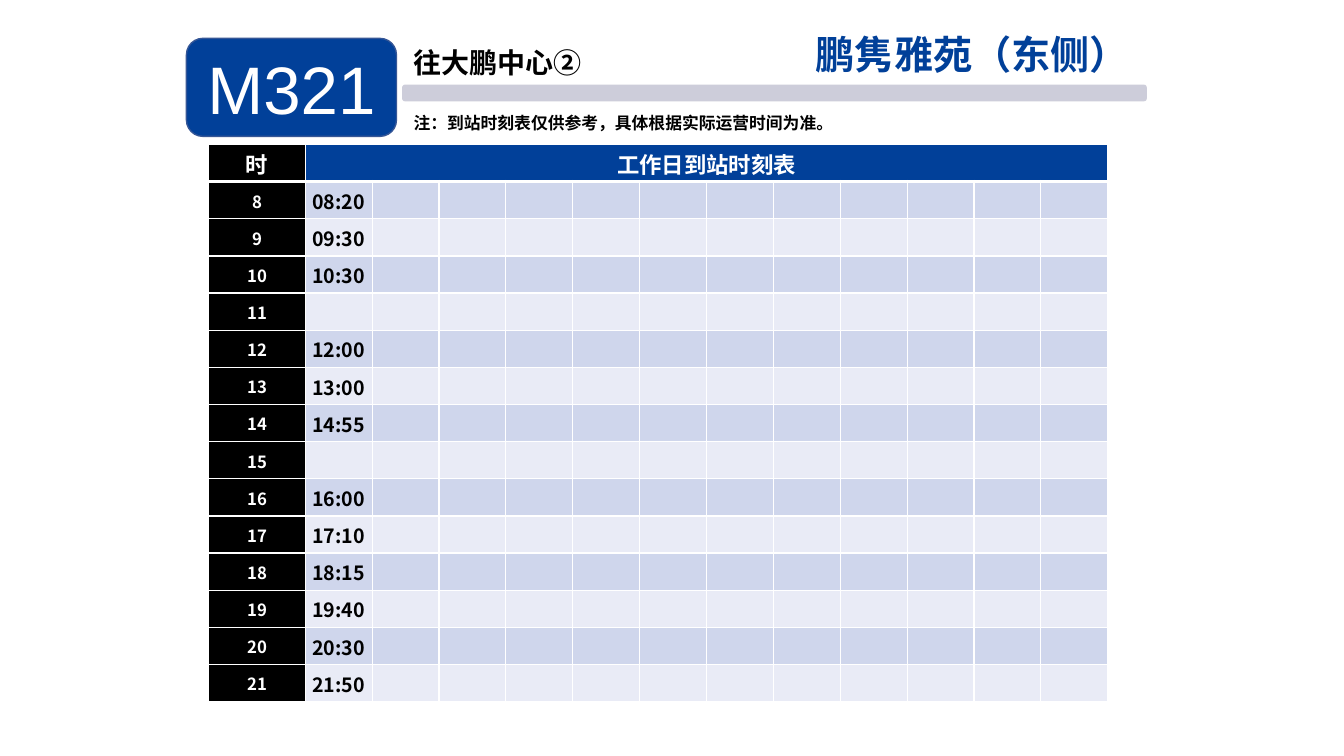
from dataclasses import dataclass

from pptx import Presentation
from pptx.dml.color import RGBColor
from pptx.enum.shapes import MSO_SHAPE as Preset
from pptx.enum.text import MSO_ANCHOR as Anchor, MSO_AUTO_SIZE as AutoSize, PP_ALIGN as Align
from pptx.oxml.ns import qn
from pptx.util import Pt
from lxml.etree import SubElement

COLORS = {
    "blue": "014099",
    "badge_line": "355696",
    "bar": "CDCDDA",
    "black": "000000",
    "white": "FFFFFF",
    "band_dark": "CFD6EC",
    "band_light": "E9EBF6",
}
CJK_FONT = "Noto Sans CJK SC"
LATIN_FONT = "Arial"


@dataclass(frozen=True)
class TextStyle:
    size: float
    color: str
    font: str = CJK_FONT
    bold: bool = True


@dataclass(frozen=True)
class Box:
    left: float
    top: float
    width: float
    height: float

    def lengths(self) -> tuple:
        return Pt(self.left), Pt(self.top), Pt(self.width), Pt(self.height)


@dataclass(frozen=True)
class Label:
    text: str
    box: Box
    style: TextStyle


@dataclass(frozen=True)
class Departure:
    hour: int
    time: str = ""


LABELS = [
    Label("往大鹏中心②", Box(294.5, 31.7, 247, 25.2), TextStyle(20, "black")),
    Label("注：到站时刻表仅供参考，具体根据实际运营时间为准。",
          Box(294.5, 79.9, 301.7, 15.8), TextStyle(12, "black")),
]
DEPARTURES = [
    Departure(8, "08:20"), Departure(9, "09:30"), Departure(10, "10:30"),
    Departure(11), Departure(12, "12:00"), Departure(13, "13:00"),
    Departure(14, "14:55"), Departure(15), Departure(16, "16:00"),
    Departure(17, "17:10"), Departure(18, "18:15"), Departure(19, "19:40"),
    Departure(20, "20:30"), Departure(21, "21:50"),
]
TIME_COLUMNS = 12
HOUR_WIDTH, TIME_WIDTH, ROW_HEIGHT = 68.9, 47.78, 26.55
HEADER_STYLE = TextStyle(16, "white")
HOUR_STYLE = TextStyle(12, "white")
TIME_STYLE = TextStyle(14, "black")


def rgb(name: str) -> RGBColor:
    return RGBColor.from_string(COLORS[name])


def write(text_frame, text: str, style: TextStyle, align=Align.LEFT):
    text_frame.text = text
    paragraph = text_frame.paragraphs[0]
    paragraph.alignment = align
    for run in paragraph.runs:
        run.font.size = Pt(style.size)
        run.font.bold = style.bold
        run.font.color.rgb = rgb(style.color)
        run.font.name = style.font
        # Chinese glyphs take the East Asian typeface
        SubElement(run.font._element, qn("a:ea")).set("typeface", CJK_FONT)
    return paragraph


def add_rounded(slide, box: Box, fill: str):
    shape = slide.shapes.add_shape(Preset.ROUNDED_RECTANGLE, *box.lengths())
    shape.shadow.inherit = False
    shape.fill.solid()
    shape.fill.fore_color.rgb = rgb(fill)
    shape.line.fill.background()
    return shape


def add_label(slide, label: Label) -> None:
    text_frame = slide.shapes.add_textbox(*label.box.lengths()).text_frame
    text_frame.word_wrap = True
    text_frame.margin_left = text_frame.margin_top = Pt(0.9)
    text_frame.margin_right = text_frame.margin_bottom = 0
    write(text_frame, label.text, label.style).space_before = Pt(1)


def format_cell(cell, fill: str, top: float = 1, bottom: float = 1) -> None:
    cell.margin_left = cell.margin_top = cell.margin_right = Pt(0.72)
    cell.margin_bottom = 0
    cell.vertical_anchor = Anchor.MIDDLE
    properties = cell._tc.get_or_add_tcPr()
    for side, width in (("L", 1), ("R", 1), ("T", top), ("B", bottom)):
        border = SubElement(properties, qn(f"a:ln{side}"), w=str(Pt(width)))
        SubElement(SubElement(border, qn("a:solidFill")), qn("a:srgbClr"), val=COLORS["white"])
    cell.fill.solid()
    cell.fill.fore_color.rgb = rgb(fill)


def add_timetable(slide) -> None:
    rows = len(DEPARTURES) + 1
    box = Box(149.2, 103.2, HOUR_WIDTH + TIME_COLUMNS * TIME_WIDTH, rows * ROW_HEIGHT)
    table = slide.shapes.add_table(rows, TIME_COLUMNS + 1, *box.lengths()).table
    for index, column in enumerate(table.columns):
        column.width = Pt(TIME_WIDTH if index else HOUR_WIDTH)
    for row in table.rows:
        row.height = Pt(ROW_HEIGHT)

    # Header row
    for index in range(TIME_COLUMNS + 1):
        format_cell(table.cell(0, index), "blue" if index else "black", bottom=3)
    table.cell(0, 1).merge(table.cell(0, TIME_COLUMNS))
    for index, text in enumerate(("时", "工作日到站时刻表")):
        write(table.cell(0, index).text_frame, text, HEADER_STYLE, Align.CENTER)

    # One row per hour, in alternating bands
    for row, departure in enumerate(DEPARTURES, start=1):
        band = "band_dark" if row % 2 else "band_light"
        for index in range(TIME_COLUMNS + 1):
            format_cell(table.cell(row, index), band if index else "black",
                        top=3 if row == 1 else 1)
        write(table.cell(row, 0).text_frame, str(departure.hour), HOUR_STYLE, Align.CENTER)
        if departure.time:
            write(table.cell(row, 1).text_frame, departure.time, TIME_STYLE, Align.CENTER)


def main() -> None:
    presentation = Presentation()
    presentation.slide_width, presentation.slide_height = Pt(960), Pt(540)
    slide = presentation.slides.add_slide(presentation.slide_layouts[5])

    # Stop name
    title = slide.shapes.title
    title.left, title.top, title.width, title.height = Box(514.8, 18, 298.8, 39.6).lengths()
    title.text_frame.auto_size = AutoSize.NONE
    title.text_frame.vertical_anchor = Anchor.TOP
    write(title.text_frame, "鹏隽雅苑（东侧）", TextStyle(28, "blue", LATIN_FONT), Align.RIGHT)

    # Divider bar and route badge
    bar = add_rounded(slide, Box(287.2, 60.4, 532, 12), "bar")
    bar.adjustments[0] = 0.18
    badge = add_rounded(slide, Box(133.2, 27.4, 150, 70), "blue")
    badge.line.color.rgb = rgb("badge_line")
    badge.line.width = Pt(1)
    badge.text_frame.vertical_anchor = Anchor.MIDDLE
    write(badge.text_frame, "M321", TextStyle(48, "white", LATIN_FONT, False), Align.CENTER)

    # Direction and note
    for label in LABELS:
        add_label(slide, label)

    add_timetable(slide)
    presentation.save("out.pptx")


if __name__ == "__main__":
    main()
